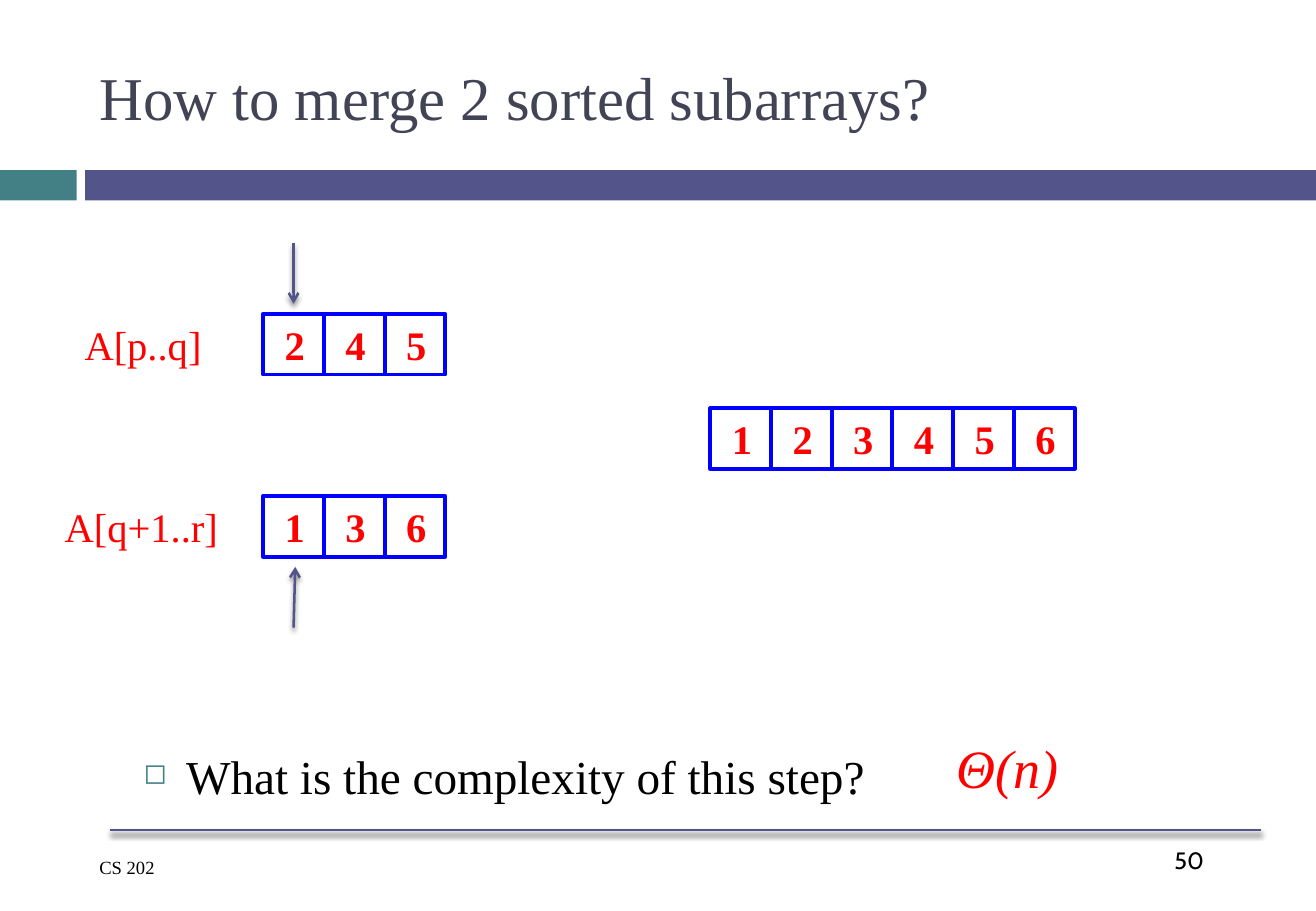
from lxml import etree
from pptx import Presentation
from pptx import util as u
from pptx.dml.color import RGBColor
from pptx.enum import shapes, text
from pptx.oxml.ns import qn

SERIF = "Times New Roman"
TEAL, INDIGO, SLATE = "438086", "53548A", "424456"
RED, BLUE, BLACK = "FF0000", "0000FF", "000000"
CELL = 36


def rgb(value):
    return RGBColor.from_string(value)


def add(parent, tag, **attrs):
    """Append a DrawingML child element and return it."""
    return etree.SubElement(parent, qn(tag), {k: str(v) for k, v in attrs.items()})


class Canvas:
    def __init__(self, slide, font=SERIF):
        self.s = slide
        self.font = font

    def style(self, p, size, color, bold=False, italic=False, font=None):
        f = p.font
        f.name, f.size = font or self.font, u.Pt(size)
        f.bold, f.italic = bold, italic
        f.color.rgb = rgb(color)

    def rect(self, x, y, w, h, fill=None, line=None):
        sp = self.s.shapes.add_shape(
            shapes.MSO_SHAPE.RECTANGLE, u.Pt(x), u.Pt(y), u.Pt(w), u.Pt(h))
        sp.shadow.inherit = False
        if fill:
            sp.fill.solid()
            sp.fill.fore_color.rgb = rgb(fill)
        else:
            sp.fill.background()
        if line:
            sp.line.color.rgb = rgb(line)
            sp.line.width = u.Pt(2.29)
        else:
            sp.line.fill.background()
        return sp

    def array(self, x, y, values):
        """Draw a row of touching square cells, one per value."""
        for i, value in enumerate(values):
            sp = self.rect(x + i * CELL, y, CELL, CELL, line=BLUE)
            tf = sp.text_frame
            tf.margin_left, tf.margin_right = u.Pt(5), u.Pt(3.5)
            tf.vertical_anchor = text.MSO_ANCHOR.MIDDLE
            p = tf.paragraphs[0]
            p.text, p.alignment = str(value), text.PP_ALIGN.CENTER
            self.style(p, 24, RED, bold=True)

    def label(self, x, y, w, h, words, size, color=BLACK, center=False,
              anchor=text.MSO_ANCHOR.TOP, **font):
        tf = self.s.shapes.add_textbox(u.Pt(x), u.Pt(y), u.Pt(w), u.Pt(h)).text_frame
        tf.word_wrap = not center
        tf.vertical_anchor = anchor
        p = tf.paragraphs[0]
        p.text = words
        p.alignment = text.PP_ALIGN.CENTER if center else text.PP_ALIGN.LEFT
        self.style(p, size, color, **font)
        return p

    def bullet(self, x, y, w, h, words, size):
        p = self.label(x, y, w, h, words, size)
        pPr = p._p.get_or_add_pPr()
        pPr.set("marL", str(u.Pt(25.2)))
        pPr.set("indent", str(u.Pt(-25.2)))
        mark = etree.Element(qn("a:buClr"))
        add(mark, "a:srgbClr", val=TEAL)
        pPr.insert(0, mark)
        size_pct = etree.Element(qn("a:buSzPct"), val="60000")
        char = etree.Element(qn("a:buChar"), char="◻")
        pPr.insert(1, size_pct)
        pPr.insert(2, char)

    def line(self, x1, y1, x2, y2, arrow=False):
        """Draw a softly shadowed line, with an open arrowhead at its end if asked."""
        c = self.s.shapes.add_connector(
            shapes.MSO_CONNECTOR.STRAIGHT, u.Pt(x1), u.Pt(y1), u.Pt(x2), u.Pt(y2))
        c.line.color.rgb = rgb(INDIGO)
        c.line.width = u.Pt(1.5)
        if arrow:
            add(c.line._get_or_add_ln(), "a:tailEnd", type="arrow")
        effects = add(c._element.spPr, "a:effectLst")
        shadow = add(effects, "a:outerShdw", blurRad=u.Pt(3), dist=u.Pt(2.4),
                     dir=90 * 60000, rotWithShape=0)
        add(add(shadow, "a:srgbClr", val=BLACK), "a:alpha", val=45000)


def main():
    prs = Presentation()
    prs.slide_width, prs.slide_height = u.Pt(780), u.Pt(540)
    c = Canvas(prs.slides.add_slide(prs.slide_layouts[6]))

    c.rect(0, 100.8, 45.5, 18, fill=TEAL)
    c.rect(50.4, 100.8, 729.6, 18, fill=INDIGO)
    c.label(51.8, 18, 695.5, 78, "How to merge 2 sorted subarrays?", 36, SLATE,
            anchor=text.MSO_ANCHOR.MIDDLE)

    c.label(42, 186, 85.5, CELL, "A[p..q]", 24, RED, center=True)
    c.label(30, 294, 107.5, CELL, "A[q+1..r]", 24, RED, center=True)
    c.array(156, 186, [2, 4, 5])
    c.array(156, 294, [1, 3, 6])
    c.array(421, 242, range(1, 7))
    c.line(174, 144, 174, 180, arrow=True)
    c.line(174, 372, 175, 336, arrow=True)

    c.bullet(78, 439.5, 470, 40, "What is the complexity of this step?", 28)
    c.label(558, 432, 78.5, 46, "Θ(n)", 32, RED, center=True, italic=True)

    c.line(65, 492, 747.5, 492)
    c.label(51.8, 504, 143, 21, "CS 202", 11)
    c.label(689, 498, 58.5, 36, "50", 14, font="Cabin")

    prs.save("out.pptx")


if __name__ == "__main__":
    main()
